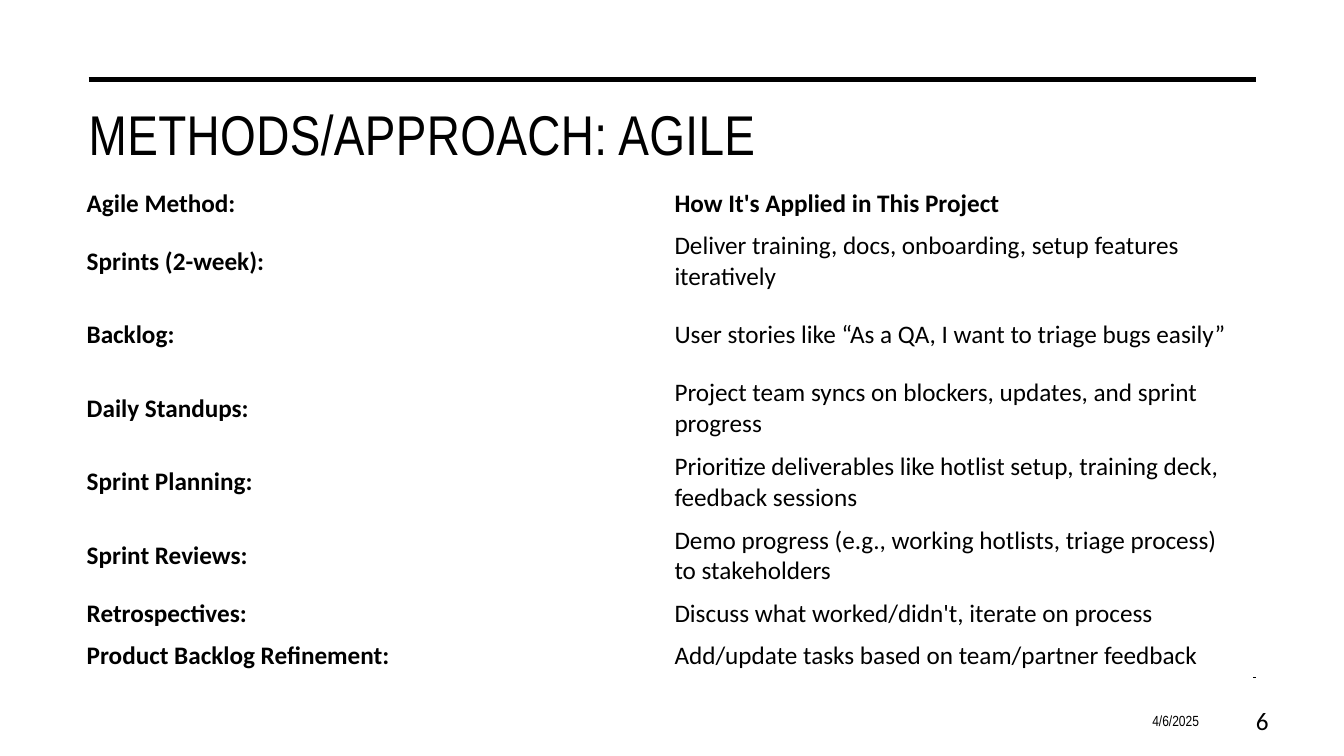
from lxml.etree import SubElement
from pptx import Presentation
from pptx.dml.color import RGBColor
from pptx.enum.shapes import MSO_CONNECTOR
from pptx.enum.text import MSO_ANCHOR, PP_ALIGN
from pptx.oxml.ns import qn
from pptx.util import Inches, Pt

BLACK = RGBColor(0, 0, 0)
HEADING_FONT = "Arial Narrow"
BODY_FONT = "Calibri"

AGILE_ROWS = [
    ("Agile Method:", "How It's Applied in This Project"),
    ("Sprints (2-week):", "Deliver training, docs, onboarding, setup features iteratively"),
    ("Backlog:", "User stories like “As a QA, I want to triage bugs easily”"),
    ("Daily Standups:", "Project team syncs on blockers, updates, and sprint progress"),
    ("Sprint Planning:", "Prioritize deliverables like hotlist setup, training deck, feedback sessions"),
    ("Sprint Reviews:", "Demo progress (e.g., working hotlists, triage process) to stakeholders"),
    ("Retrospectives:", "Discuss what worked/didn't, iterate on process"),
    ("Product Backlog Refinement:", "Add/update tasks based on team/partner feedback"),
]
SHORT_ROW, TALL_ROW = 0.42, 0.73
ROW_HEIGHTS = [SHORT_ROW] + [TALL_ROW] * 5 + [SHORT_ROW] * 2


class SlideBuilder:
    def __init__(self, slide):
        self.slide = slide

    def set_text(self, frame, text, size, font, bold=False, align=PP_ALIGN.LEFT):
        """Fill a text frame with one styled paragraph and return its run."""
        frame.text = text
        frame.word_wrap = True
        para = frame.paragraphs[0]
        para.alignment = align
        span = para.runs[0]
        span.font.size = Pt(size)
        span.font.name = font
        span.font.bold = bold
        span.font.color.rgb = BLACK
        return span

    def rule(self, top, weight):
        line = self.slide.shapes.add_connector(
            MSO_CONNECTOR.STRAIGHT, Inches(0.88), Inches(top), Inches(12.46), Inches(top))
        line.line.color.rgb = BLACK
        line.line.width = Pt(weight)
        SubElement(line._element.spPr, qn("a:effectLst"))

    def title(self, text):
        box = self.slide.shapes.title
        box.left, box.top = Inches(0.78), Inches(0.89)
        box.width, box.height = Inches(11.66), Inches(1.18)
        frame = box.text_frame
        span = self.set_text(frame, text, 40, HEADING_FONT)
        frame.vertical_anchor = MSO_ANCHOR.TOP
        frame.margin_top = Inches(0.1)
        span.font._element.set("spc", "30")

    def table(self, rows, heights):
        frame = self.slide.shapes.add_table(
            len(rows), 2, Inches(0.76), Inches(1.81), Inches(11.66), Inches(sum(heights)))
        table = frame.table
        table.first_row = table.horz_banding = False
        for row_index, (texts, height) in enumerate(zip(rows, heights)):
            table.rows[row_index].height = Inches(height)
            for column_index, text in enumerate(texts):
                cell = table.cell(row_index, column_index)
                cell.fill.background()
                cell.vertical_anchor = MSO_ANCHOR.MIDDLE
                bold = row_index == 0 or column_index == 0
                self.set_text(cell.text_frame, text, 18, BODY_FONT, bold)

    def footer(self, text, left, width, size, font):
        box = self.slide.shapes.add_textbox(
            Inches(left), Inches(6.95), Inches(width), Inches(0.4))
        box.text_frame.vertical_anchor = MSO_ANCHOR.MIDDLE
        self.set_text(box.text_frame, text, size, font, align=PP_ALIGN.RIGHT)


def main():
    deck = Presentation()
    deck.slide_width, deck.slide_height = Inches(13.33), Inches(7.5)
    page = SlideBuilder(deck.slides.add_slide(deck.slide_layouts[5]))
    page.rule(0.79, 3.5)
    page.rule(6.72, 1)
    page.title("METHODS/APPROACH: AGILE")
    page.table(AGILE_ROWS, ROW_HEIGHTS)
    page.footer("4/6/2025", 9.15, 2.84, 10.5, HEADING_FONT)
    page.footer("6", 11.94, 0.74, 18, BODY_FONT)
    deck.save("out.pptx")


if __name__ == "__main__":
    main()
